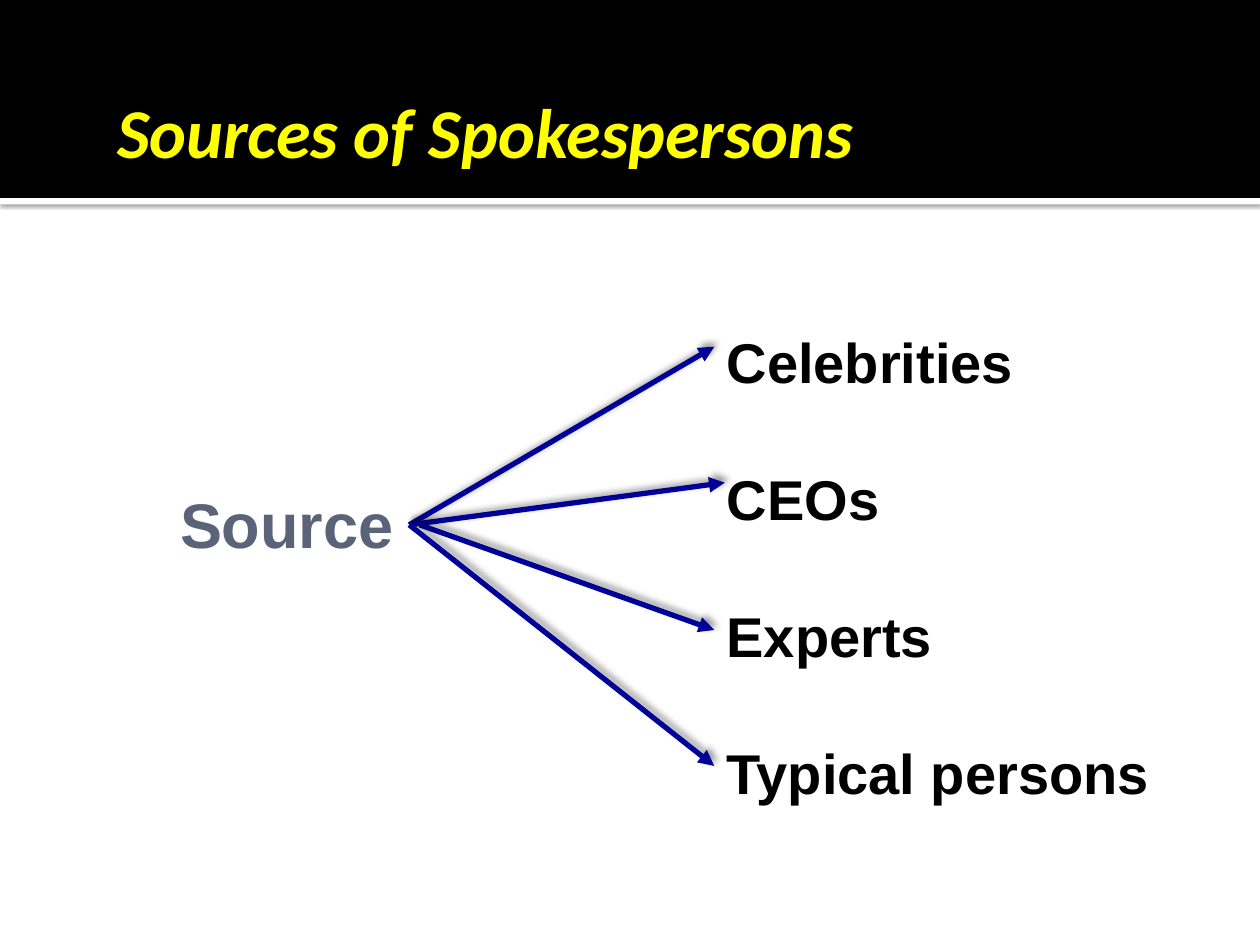
from dataclasses import dataclass

from lxml import etree
from pptx import Presentation
from pptx import util as u
from pptx.dml.color import RGBColor
from pptx.enum import shapes, text
from pptx.oxml import ns


@dataclass(frozen=True)
class Theme:
    """Colours, fonts and type sizes of the slide."""
    black: str = "000000"
    white: str = "FFFFFF"
    title: str = "FFFF00"
    slate: str = "5A6378"
    navy: str = "000099"
    head: str = "Calibri"
    body: str = "Arial"
    big: int = 40
    mid: int = 36
    small: int = 32
    gap: int = 40
    line: int = 3


LOOK = Theme()
LABELS = ("Celebrities", "CEOs", "Experts", "Typical persons")
ENDS = ((4.87, 0, 11.02, 0.64), (4.87, 0, 11.23, 3.38),
        (5.08, 0, 11.02, 6.35), (4.87, 0, 11.02, 9.09))


def cast(part, alpha, blur, dist, angle):
    """Give a part an outer black shadow."""
    fx = etree.SubElement(part.element.spPr, ns.qn("a:effectLst"))
    glow = etree.SubElement(
        fx, ns.qn("a:outerShdw"), blurRad=str(u.Pt(blur)),
        dist=str(u.Pt(dist)), dir=str(angle * 60000), rotWithShape="0")
    tint = etree.SubElement(glow, ns.qn("a:srgbClr"), val=LOOK.black)
    etree.SubElement(tint, ns.qn("a:alpha"), val=str(alpha * 1000))


def write(para, words, face, size, hue, slant=False):
    """Add one bold run to a paragraph."""
    run = para.add_run()
    run.text = words
    font = run.font
    font.name, font.size, font.bold, font.italic = face, u.Pt(size), True, slant
    font.color.rgb = RGBColor.from_string(hue)


def bar(slide, x, y, w, h, hue):
    """Draw a plain bar behind the title."""
    part = slide.shapes.add_shape(
        shapes.MSO_SHAPE.RECTANGLE, u.Cm(x), u.Cm(y), u.Cm(w), u.Cm(h))
    part.fill.solid()
    part.fill.fore_color.rgb = RGBColor.from_string(hue)
    part.line.fill.background()
    slide.shapes.title.element.addprevious(part.element)
    return part


def header(slide, x, y, w, h):
    """Place the title on its band with a shaded edge below."""
    edge = bar(slide, x, y + h, w, 0.13, LOOK.white)
    cast(edge, 60, 2.5, 0.8, 90)
    band = bar(slide, x, y, w, h, LOOK.black)
    band.shadow.inherit = False
    title = slide.shapes.title
    title.left, title.top = u.Cm(x + 2.11), u.Cm(y + 1.47)
    title.width, title.height = u.Cm(w - 2.97), u.Cm(2.34)
    frame = title.text_frame
    frame.word_wrap = True
    frame.auto_size = text.MSO_AUTO_SIZE.NONE
    frame.vertical_anchor = text.MSO_ANCHOR.MIDDLE
    frame.margin_left = u.Cm(0.25)
    frame.margin_top = frame.margin_right = frame.margin_bottom = u.Cm(0.13)
    para = frame.paragraphs[0]
    para.alignment = text.PP_ALIGN.LEFT
    write(para, "Sources of Spokespersons", LOOK.head, LOOK.big, LOOK.title, True)


def label(slide, x, y, w, h, lines, size, hue):
    """Add a text box with one evenly spaced paragraph per line."""
    frame = slide.shapes.add_textbox(
        u.Cm(x), u.Cm(y), u.Cm(w), u.Cm(h)).text_frame
    frame.word_wrap = False
    frame.margin_top = u.Cm(0.25)
    for i, words in enumerate(lines):
        para = frame.add_paragraph() if i else frame.paragraphs[0]
        para.space_before = u.Pt(LOOK.gap if i else 0)
        write(para, words, LOOK.body, size, hue)


def arrow(slide, x, y, tox, toy):
    """Draw a shaded arrow between two points."""
    link = slide.shapes.add_connector(
        shapes.MSO_CONNECTOR.STRAIGHT, u.Cm(x), u.Cm(y), u.Cm(tox), u.Cm(toy))
    link.line.width = u.Pt(LOOK.line)
    link.line.color.rgb = RGBColor.from_string(LOOK.navy)
    etree.SubElement(link.line._get_or_add_ln(), ns.qn("a:tailEnd"), type="triangle")
    cast(link, 40, 4, 3, 315)


def fan(slide, x, y, w, h):
    """Lay out the source, its kinds and the arrows between them."""
    label(slide, x, y + 3.18, 4.85, 1.8, ("Source",), LOOK.mid, LOOK.slate)
    label(slide, x + 11.02, y, w - 11.02, h, LABELS, LOOK.small, LOOK.black)
    for fromx, _, tox, toy in ENDS:
        arrow(slide, x + fromx, y + 4.23, x + tox, y + toy)


def main():
    """Build and save the slide."""
    deck = Presentation()
    deck.slide_width, deck.slide_height = u.Cm(25.4), u.Cm(19.05)
    slide = deck.slides.add_slide(deck.slide_layouts[5])
    header(slide, 0, 0, 25.4, 3.99)
    fan(slide, 3.38, 6.35, 20.11, 9.83)
    deck.save("out.pptx")


if __name__ == "__main__":
    main()
